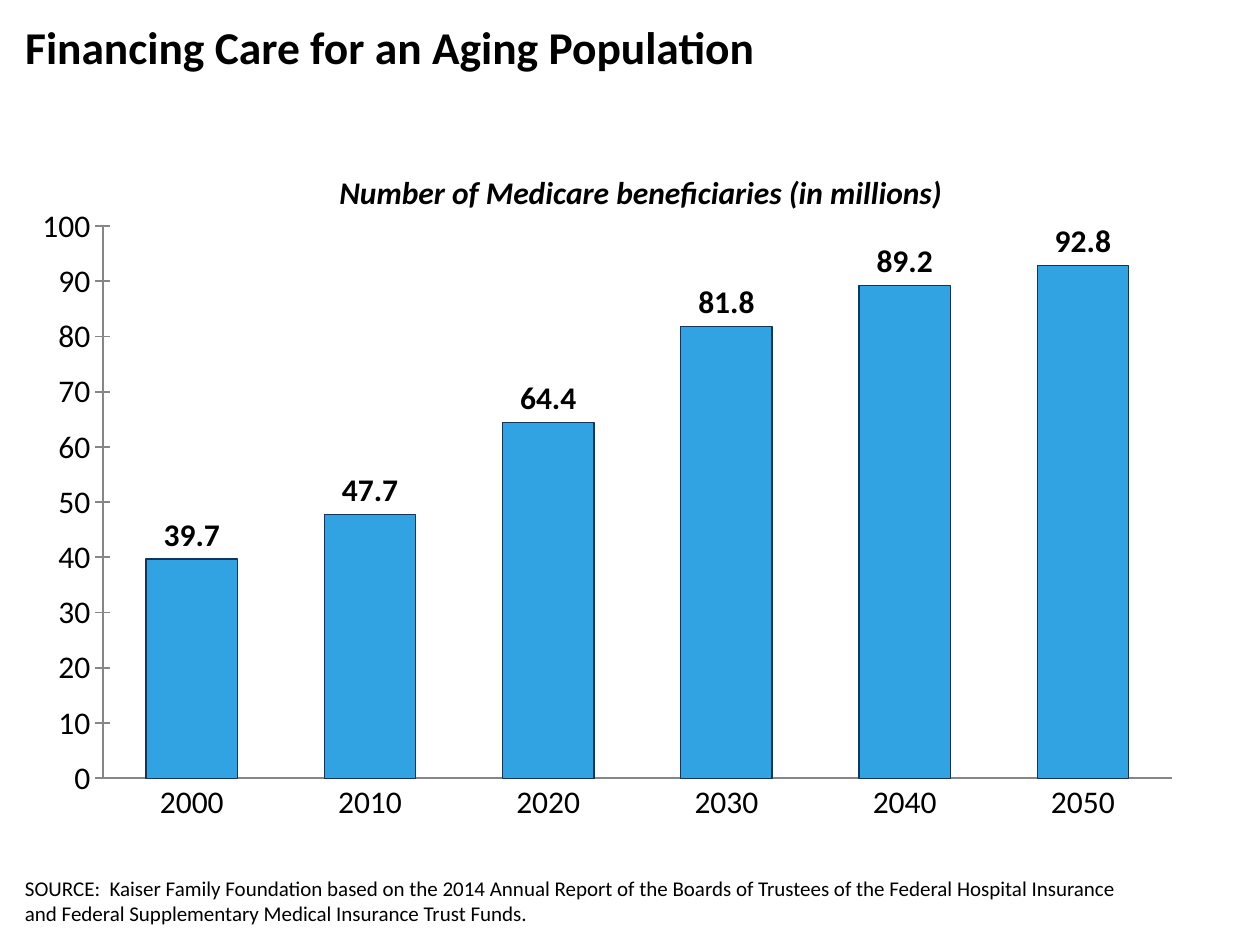
"""Build a slide charting the growth in Medicare beneficiaries."""
from pptx import Presentation
from pptx.chart.data import CategoryChartData
from pptx.dml.color import RGBColor
from pptx.enum.chart import XL_CHART_TYPE as ChartType, XL_LABEL_POSITION as LabelPosition
from pptx.enum.chart import XL_TICK_MARK as TickMark
from pptx.enum.text import MSO_ANCHOR as Anchor, PP_ALIGN as Align
from pptx.oxml import parse_xml
from pptx.oxml.ns import nsdecls, qn
from pptx.util import Pt

BLACK = RGBColor(0x00, 0x00, 0x00)
BLUE = RGBColor(0x31, 0xA3, 0xE3)
NAVY = RGBColor(0x13, 0x35, 0x59)
GRAY = RGBColor(0x86, 0x86, 0x86)

BENEFICIARIES = {
    "2000": 39.7, "2010": 47.7, "2020": 64.4,
    "2030": 81.8, "2040": 89.2, "2050": 92.8,
}
SOURCE = (
    "SOURCE:  Kaiser Family Foundation based on the 2014 Annual Report of the Boards of "
    "Trustees of the Federal Hospital Insurance and Federal Supplementary Medical "
    "Insurance Trust Funds."
)


def set_layout(element, position, **settings):
    """Give a chart element a manual layout, in fractions of the chart."""
    for old_layout in element.findall(qn("c:layout")):
        element.remove(old_layout)
    settings.update(xMode="edge", yMode="edge", **position)
    order = ("layoutTarget", "xMode", "yMode", "x", "y", "w", "h")
    tags = "".join(f'<c:{name} val="{settings[name]}"/>' for name in order if name in settings)
    layout = parse_xml(
        f'<c:layout {nsdecls("c")}><c:manualLayout>{tags}</c:manualLayout></c:layout>'
    )
    text = element.find(qn("c:tx"))
    element.insert(0 if text is None else element.index(text) + 1, layout)


class SlideBuilder:
    """Hold the style and the current slide."""

    def __init__(self, slide, font_name="Calibri", color=BLACK):
        self.slide = slide
        self.font_name = font_name
        self.color = color

    def style(self, font, size, bold=False, italic=False):
        """Apply the slide's font style."""
        font.name = self.font_name
        font.size = Pt(size)
        font.bold = bold
        font.italic = italic
        font.color.rgb = self.color

    def fill_text(self, shape, text, size, anchor, bold=False):
        """Write one left-aligned paragraph into a shape."""
        frame = shape.text_frame
        frame.word_wrap = True
        frame.vertical_anchor = anchor
        frame.text = text
        paragraph = frame.paragraphs[0]
        paragraph.alignment = Align.LEFT
        self.style(paragraph.font, size, bold)

    def title(self, text, left, top, width, height):
        """Place and format the title placeholder."""
        shape = self.slide.shapes.title
        shape.left, shape.top, shape.width, shape.height = map(Pt, (left, top, width, height))
        self.fill_text(shape, text, 26, Anchor.TOP, bold=True)

    def text(self, text, left, top, width, height):
        """Add a bottom-anchored text box."""
        shape = self.slide.shapes.add_textbox(*map(Pt, (left, top, width, height)))
        self.fill_text(shape, text, 12, Anchor.BOTTOM)

    def axis(self, axis, tick_mark):
        """Format a chart axis."""
        axis.has_major_gridlines = False
        axis.major_tick_mark = tick_mark
        axis.minor_tick_mark = TickMark.NONE
        axis.format.line.color.rgb = GRAY
        axis.format.line.width = Pt(1)
        self.style(axis.tick_labels.font, 18)

    def column_chart(self, title, values, left, top, width, height):
        """Add a single-series column chart."""
        data = CategoryChartData(number_format="0.0")
        data.categories = list(values)
        data.add_series("Series 1", list(values.values()))
        chart = self.slide.shapes.add_chart(
            ChartType.COLUMN_CLUSTERED, *map(Pt, (left, top, width, height)), data
        ).chart
        self.style(chart.font, 18, bold=True)
        chart.has_legend = False

        chart.has_title = True
        chart.chart_title.text_frame.text = title
        self.style(chart.chart_title.text_frame.paragraphs[0].font, 18, bold=True, italic=True)
        set_layout(chart.chart_title._element, {"x": 0.26, "y": 0.04})
        set_layout(
            chart._chartSpace.chart.plotArea,
            {"x": 0.073, "y": 0.127, "w": 0.866, "h": 0.78},
            layoutTarget="inner",
        )

        self.axis(chart.category_axis, TickMark.NONE)
        self.axis(chart.value_axis, TickMark.CROSS)
        chart.value_axis.minimum_scale = 0
        chart.value_axis.maximum_scale = 100
        chart.value_axis.major_unit = 10
        chart.value_axis.tick_labels.number_format = "0"
        chart.value_axis.tick_labels.number_format_is_linked = False

        plot = chart.plots[0]
        plot.gap_width = 95
        plot.vary_by_categories = False
        plot.has_data_labels = True
        labels = plot.data_labels
        labels.show_value = True
        labels.position = LabelPosition.OUTSIDE_END
        labels.number_format = "0.0"
        labels.number_format_is_linked = False
        self.style(labels.font, 18, bold=True)

        columns = plot.series[0].format
        columns.fill.solid()
        columns.fill.fore_color.rgb = BLUE
        columns.line.color.rgb = NAVY
        columns.line.width = Pt(0.75)


def main():
    """Build and save the presentation."""
    presentation = Presentation()
    presentation.slide_width, presentation.slide_height = Pt(720), Pt(540)
    builder = SlideBuilder(presentation.slides.add_slide(presentation.slide_layouts[5]))
    builder.column_chart(
        "Number of Medicare beneficiaries (in millions)", BENEFICIARIES, 7.2, 77.76, 705.6, 404.64
    )
    builder.text(SOURCE, 7.2, 489.6, 655.2, 43.2)
    builder.title("Financing Care for an Aging Population", 7.2, 7.2, 705.6, 72)
    presentation.save("out.pptx")


if __name__ == "__main__":
    main()
